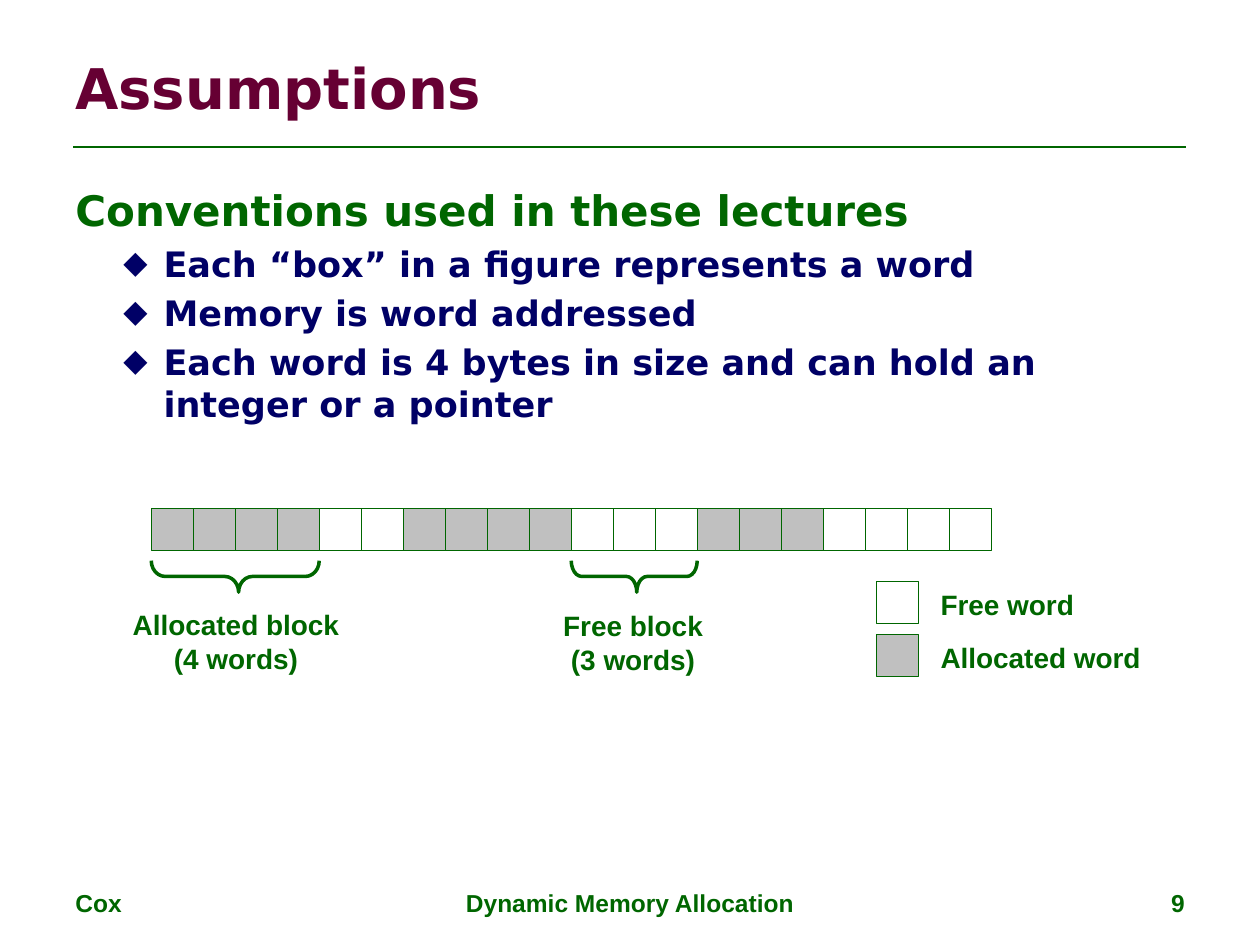
from lxml.etree import SubElement as Sub
from pptx import Presentation as Deck
from pptx.dml.color import RGBColor as Color
from pptx.enum.shapes import MSO_CONNECTOR as Link, MSO_SHAPE as Shape
from pptx.enum.text import MSO_ANCHOR as Anchor, PP_ALIGN as Align
from pptx.oxml.ns import qn
from pptx.util import Pt

GREEN = Color(0x00, 0x66, 0x00)
WINE = Color(0x66, 0x00, 0x33)
NAVY = Color(0x00, 0x00, 0x66)
GREY = Color(0xC0, 0xC0, 0xC0)
WHITE = Color(0xFF, 0xFF, 0xFF)
HEAD, SANS = "DejaVu Sans", "Arial"
CELL, LEFT, TOP = 24, 86.4, 290.4
WORDS = [(4, GREY), (2, WHITE), (4, GREY), (3, WHITE), (3, GREY), (4, WHITE)]
NOTES = [
    "Each “box” in a figure represents a word",
    "Memory is word addressed",
    "Each word is 4 bytes in size and can hold an integer or a pointer",
]


def add_frame(slide, x, y, w, h, wrap=True):
    """Add an empty text box and return its frame."""
    frame = slide.shapes.add_textbox(Pt(x), Pt(y), Pt(w), Pt(h)).text_frame
    frame.word_wrap = wrap
    return frame


def add_run(para, text, size, color=GREEN, font=SANS):
    """Add one bold run to a paragraph."""
    run = para.add_run()
    run.text = text
    run.font.size = Pt(size)
    run.font.name = font
    run.font.bold = True
    run.font.color.rgb = color


def add_label(slide, box, lines, size=16, align=Align.LEFT, wrap=False):
    """Add a plain green label of one or more lines."""
    frame = add_frame(slide, *box, wrap)
    for i, line in enumerate(lines):
        para = frame.add_paragraph() if i else frame.paragraphs[0]
        para.alignment = align
        add_run(para, line, size)


def set_list(para, left, hang, size, mark=None):
    """Set the space, indent and bullet of a list paragraph."""
    para.space_before = Pt(size * 0.2)
    props = para._p.get_or_add_pPr()
    props.set("marL", str(Pt(left)))
    props.set("indent", str(-Pt(hang)))
    if mark:
        para.level = 1
        Sub(props, qn("a:buSzPct"), val="90000")
        Sub(props, qn("a:buFont"), typeface=HEAD)
        Sub(props, qn("a:buChar"), char=mark)


def add_body(slide):
    """Add the heading and its bullet list."""
    frame = add_frame(slide, 36, 102, 648, 380)
    para = frame.paragraphs[0]
    set_list(para, 13.5, 13.5, 24)
    add_run(para, "Conventions used in these lectures", 24, GREEN, HEAD)
    for note in NOTES:
        para = frame.add_paragraph()
        set_list(para, 50.4, 23, 20, "◆")
        add_run(para, note, 20, NAVY, HEAD)


def add_word(slide, x, y, fill):
    """Add one memory word."""
    box = slide.shapes.add_shape(Shape.RECTANGLE, Pt(x), Pt(y), Pt(CELL), Pt(CELL))
    box.shadow.inherit = False
    box.fill.solid()
    box.fill.fore_color.rgb = fill
    box.line.color.rgb = GREEN
    box.line.width = Pt(0.25)


def add_brace(slide, first, count, bend):
    """Add a downward brace under a run of words."""
    span, deep = count * CELL, 18
    mid_x, mid_y = LEFT + first * CELL + span / 2, TOP + 39
    brace = slide.shapes.add_shape(
        Shape.RIGHT_BRACE, Pt(mid_x - deep / 2), Pt(mid_y - span / 2), Pt(deep), Pt(span))
    brace.rotation = 90
    brace.adjustments[0] = bend
    brace.adjustments[1] = 0.48
    brace.shadow.inherit = False
    brace.fill.background()
    brace.line.color.rgb = GREEN
    brace.line.width = Pt(2)


def add_rule(slide):
    """Add the line under the title."""
    rule = slide.shapes.add_connector(Link.STRAIGHT, Pt(42), Pt(84), Pt(678), Pt(84))
    rule.line.color.rgb = GREEN
    rule.line.width = Pt(1.5)
    Sub(rule._element.spPr, qn("a:effectLst"))


def main():
    """Build the slide and save it."""
    deck = Deck()
    deck.slide_width, deck.slide_height = Pt(720), Pt(540)
    slide = deck.slides.add_slide(deck.slide_layouts[6])

    add_rule(slide)
    for x, w, text, align in [
        (36, 168, "Cox", Align.LEFT),
        (246, 228, "Dynamic Memory Allocation", Align.CENTER),
        (516, 168, "9", Align.RIGHT),
    ]:
        add_label(slide, (x, 504, w, 25), [text], 14, align, True)

    title = add_frame(slide, 36, 21.6, 648, 56)
    title.vertical_anchor = Anchor.MIDDLE
    add_run(title.paragraphs[0], "Assumptions", 32, WINE, HEAD)
    add_body(slide)

    fills = [fill for count, fill in WORDS for _ in range(count)]
    for i, fill in enumerate(fills):
        add_word(slide, LEFT + i * CELL, TOP, fill)

    add_brace(slide, 0, 4, 0.44)
    add_brace(slide, 10, 3, 0.33)
    for x, y, w, lines in [
        (68.6, 343.6, 132.5, ["Allocated block", "(4 words)"]),
        (314.6, 344.2, 94.3, ["Free block", "(3 words)"]),
    ]:
        add_label(slide, (x, y, w, 46), lines, align=Align.CENTER)

    for y, w, fill, text in [
        (332, 91.4, WHITE, "Free word"),
        (362.4, 129.6, GREY, "Allocated word"),
    ]:
        add_word(slide, 500.8, y, fill)
        add_label(slide, (530.4, y, w, 26.6), [text])

    deck.save("out.pptx")


if __name__ == "__main__":
    main()
